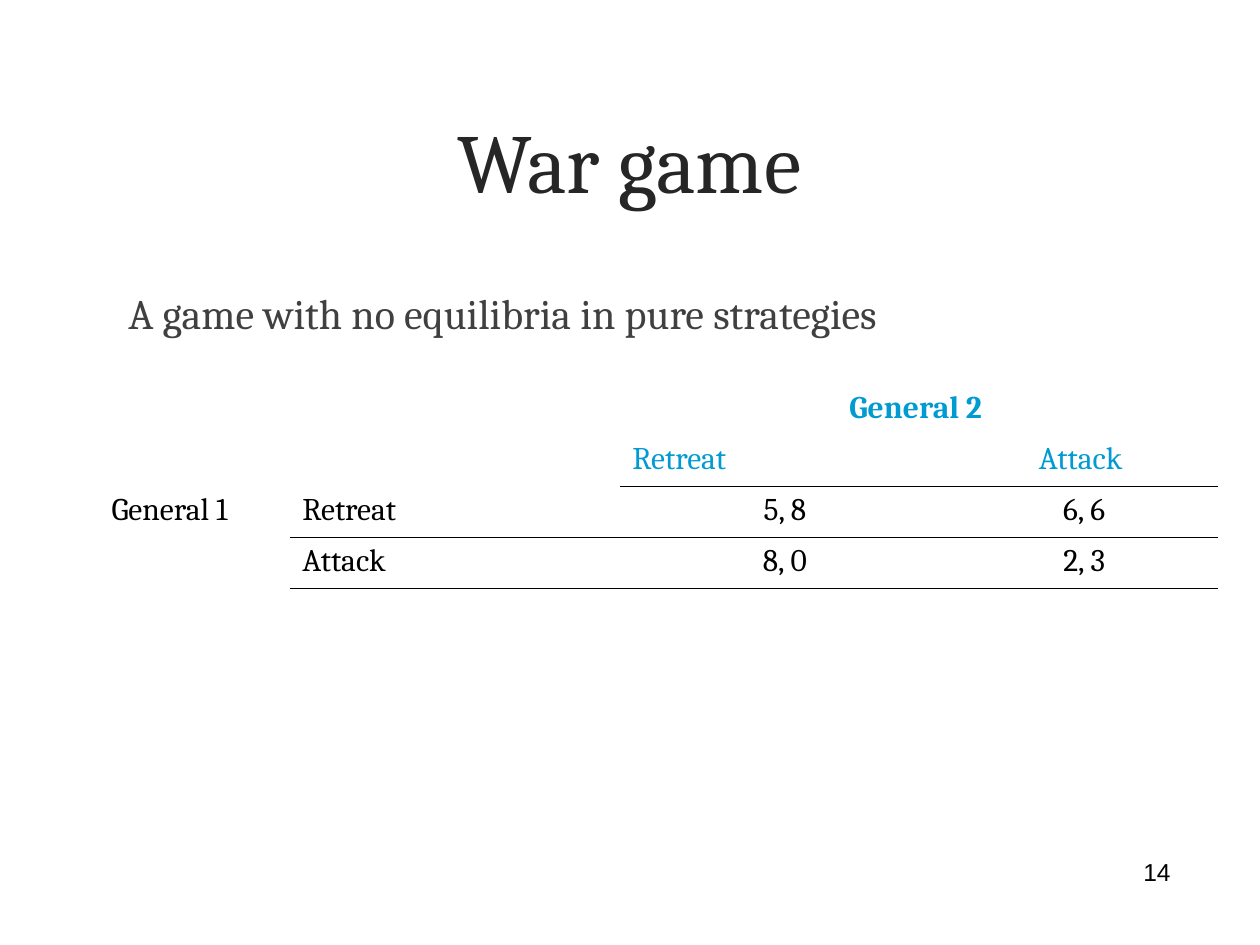
from lxml import etree
from pptx import Presentation
from pptx.dml.color import RGBColor
from pptx.enum.text import MSO_ANCHOR as Anchor, PP_ALIGN as Align
from pptx.oxml.ns import qn
from pptx.util import Inches, Pt

BLACK, BLUE = "000000", "009BD2"
NO_STYLE_NO_GRID = "{2D5ABB26-0587-4C30-8999-92F81FD0307C}"


def color(hex_string):
    return RGBColor.from_string(hex_string)


def write(frame, text, size, hex_string, align=Align.LEFT, font="Cambria", bold=False):
    para = frame.paragraphs[0]
    para.alignment = align
    span = para.add_run()
    span.text = text
    span.font.name = font
    span.font.size = Pt(size)
    span.font.bold = bold
    span.font.color.rgb = color(hex_string)


def add_title(page, left, top, width, height):
    title = page.shapes.title
    title.left, title.top = Inches(left), Inches(top)
    title.width, title.height = Inches(width), Inches(height)
    title.text_frame.vertical_anchor = Anchor.MIDDLE
    write(title.text_frame, "War game", 48, "262626", Align.CENTER)


def add_text(page, left, top, width, height, anchor, *text_format):
    box = page.shapes.add_textbox(Inches(left), Inches(top), Inches(width), Inches(height))
    box.text_frame.word_wrap = True
    box.text_frame.vertical_anchor = anchor
    write(box.text_frame, *text_format)


def rule_cell(cell, side):
    """Draw a 1 pt black line on one side of a cell ("T" or "B")."""
    props = cell._tc.get_or_add_tcPr()
    line = etree.Element(qn(f"a:ln{side}"), w=str(Pt(1)))
    fill = etree.SubElement(line, qn("a:solidFill"))
    etree.SubElement(fill, qn("a:srgbClr"), val=BLACK)
    props.insert(0, line)


def add_payoff_table(page, left, top, widths, row_height):
    rows = [
        ["", "", "General 2 ", ""],
        ["", "", "Retreat", "Attack "],
        ["General 1", "Retreat", "5, 8", "6, 6"],
        ["", "Attack", "8, 0", "2, 3"],
    ]
    holder = page.shapes.add_table(
        len(rows), len(widths), Inches(left), Inches(top),
        Inches(sum(widths)), Inches(row_height * len(rows)))
    table = holder.table
    table.first_row = table.horz_banding = False
    next(holder.element.iter(qn("a:tableStyleId"))).text = NO_STYLE_NO_GRID
    for column, width in zip(table.columns, widths):
        column.width = Inches(width)
    for row in table.rows:
        row.height = Inches(row_height)

    # Player names span their strategies
    table.cell(0, 2).merge(table.cell(0, 3))
    table.cell(2, 0).merge(table.cell(3, 0))

    for r, texts in enumerate(rows):
        for c, text in enumerate(texts):
            cell = table.cell(r, c)
            cell.fill.background()
            if text:
                align = Align.LEFT if text in ("Retreat", "Attack") else Align.CENTER
                write(cell.text_frame, text, 18, BLUE if r < 2 else BLACK, align, bold=r == 0)
            # Lines below the strategy headings and the payoff rows
            first_ruled = 2 if r == 1 else 1
            if r >= 1 and c >= first_ruled:
                rule_cell(cell, "B")
            if r == 3 and c >= 1 or r == 2 and c >= 2:
                rule_cell(cell, "T")


def main():
    deck = Presentation()
    deck.slide_width, deck.slide_height = Inches(10), Inches(7.5)
    page = deck.slides.add_slide(deck.slide_layouts[5])

    add_title(page, 0.6, 0.48, 8.79, 1.58)
    # Statement
    add_text(page, 0.92, 2.23, 8.17, 4.32, Anchor.TOP,
             "A game with no equilibria in pure strategies", 24, "404040")
    # Page number
    add_text(page, 7.06, 6.72, 2.33, 0.4, Anchor.MIDDLE,
             "14", 14, BLACK, Align.RIGHT, "Arial")
    add_payoff_table(page, 0.39, 3.05, [1.91, 2.62, 2.62, 2.13], 0.405)

    deck.save("out.pptx")


if __name__ == "__main__":
    main()
